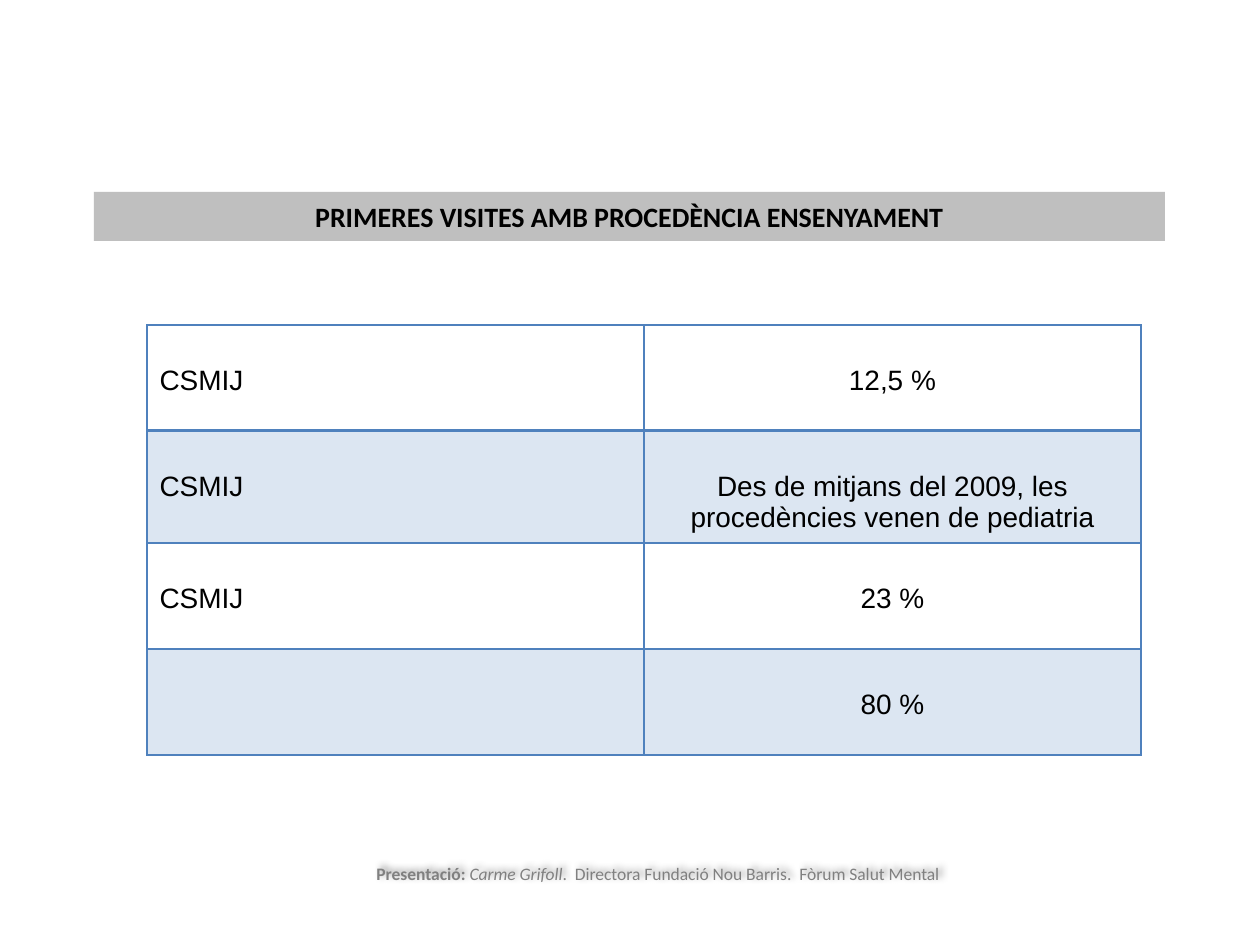
"""Build a slide with a banner, a table of first visits and a credit line."""
import pptx
import pptx.dml.color
import pptx.enum.shapes
import pptx.enum.text
import pptx.oxml
import pptx.oxml.ns
import pptx.util

PX = 914400 // 126
COLORS = {"ink": "000000", "banner": "BFBFBF", "credit": "808080",
          "border": "4F81BD", "band": "DCE6F2"}
ALIGN = pptx.enum.text.PP_ALIGN

BANNER = "PRIMERES VISITES AMB PROCEDÈNCIA ENSENYAMENT"
ROWS = [
    ("CSMIJ", "12,5 %"),
    ("CSMIJ", "Des de mitjans del 2009, les procedències venen de pediatria"),
    ("CSMIJ", "23 %"),
    ("", "80 %"),
]
CREDIT = [
    ("Presentació: ", {"bold": True}),
    ("Carme Grifoll", {"italic": True}),
    (".  Directora Fundació Nou Barris.  Fòrum Salut Mental", {}),
]
ROW_HEIGHTS = [106, 112, 106, 106]
COLUMN_WIDTH = 497
BANNER_AREA = (94, 192, 1071, 49)
TABLE_AREA = (147, 325, 2 * COLUMN_WIDTH, sum(ROW_HEIGHTS))
CREDIT_AREA = (364, 857, 620, 49)
CELL_ALIGNS = (ALIGN.LEFT, ALIGN.CENTER)


def color(name):
    return pptx.dml.color.RGBColor.from_string(COLORS[name])


def scaled(area):
    return [length * PX for length in area]


def add_xml(parent, markup):
    namespace = pptx.oxml.ns.nsdecls("a")
    parent.append(pptx.oxml.parse_xml(markup.replace(" ", f" {namespace} ", 1)))


def add_span(para, text, ink, **formats):
    span = para.add_run()
    span.text = text
    for name, value in formats.items():
        setattr(span.font, name, value)
    span.font.color.rgb = color(ink)


def add_banner(page):
    box = page.shapes.add_shape(
        pptx.enum.shapes.MSO_SHAPE.RECTANGLE, *scaled(BANNER_AREA))
    box.shadow.inherit = False
    box.fill.solid()
    box.fill.fore_color.rgb = color("banner")
    box.line.fill.background()
    para = box.text_frame.paragraphs[0]
    para.alignment = ALIGN.CENTER
    add_span(para, BANNER, "ink", name="Calibri", size=pptx.util.Pt(16), bold=True)


def add_borders(cell, row):
    points = {"L": 1, "R": 1, "T": 2 if row == 1 else 1, "B": 2 if row == 0 else 1}
    for side, width in points.items():
        add_xml(cell._tc.get_or_add_tcPr(),
                f'<a:ln{side} w="{pptx.util.Pt(width)}"><a:solidFill>'
                f'<a:srgbClr val="{COLORS["border"]}"/></a:solidFill></a:ln{side}>')


def add_visits(page):
    table = page.shapes.add_table(len(ROWS), 2, *scaled(TABLE_AREA)).table
    table.first_row = table.horz_banding = False
    for column in table.columns:
        column.width = COLUMN_WIDTH * PX
    for row, texts in enumerate(ROWS):
        table.rows[row].height = ROW_HEIGHTS[row] * PX
        for column, text in enumerate(texts):
            cell = table.cell(row, column)
            cell.margin_top = 40 * PX
            add_borders(cell, row)
            if row % 2:
                cell.fill.solid()
                cell.fill.fore_color.rgb = color("band")
            else:
                cell.fill.background()
            para = cell.text_frame.paragraphs[0]
            para.alignment = CELL_ALIGNS[column]
            if text:
                add_span(para, text, "ink", name="Arial", size=pptx.util.Pt(16))


def add_credit(page):
    box = page.shapes.add_textbox(*scaled(CREDIT_AREA))
    box.text_frame.word_wrap = True
    add_xml(box._element.spPr,
            '<a:effectLst ><a:outerShdw blurRad="50800" dist="38100" dir="18900000">'
            '<a:srgbClr val="000000"><a:alpha val="40000"/></a:srgbClr>'
            '</a:outerShdw></a:effectLst>')
    para = box.text_frame.paragraphs[0]
    para.alignment = ALIGN.JUSTIFY
    for text, formats in CREDIT:
        add_span(para, text, "credit", name="Calibri", size=pptx.util.Pt(10), **formats)


def main():
    deck = pptx.Presentation()
    deck.slide_width, deck.slide_height = pptx.util.Inches(10), pptx.util.Inches(7.5)
    page = deck.slides.add_slide(deck.slide_layouts[6])
    add_visits(page)
    add_credit(page)
    add_banner(page)
    deck.save("out.pptx")


if __name__ == "__main__":
    main()
